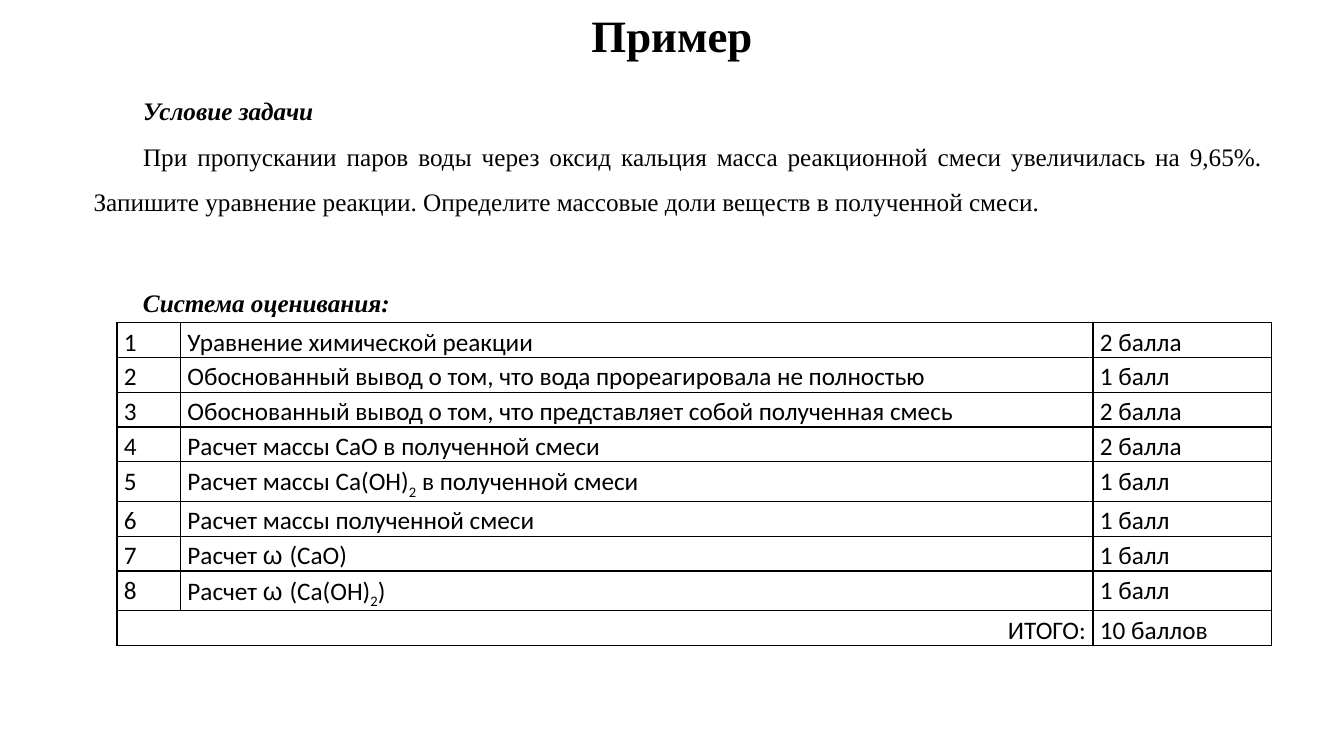
"""Build the slide with a sample chemistry task and its marking table."""
from lxml import etree
from pptx import Presentation
from pptx import util as u
from pptx.dml.color import RGBColor
from pptx.enum import text as t
from pptx.oxml import ns

BLACK = RGBColor(0, 0, 0)
WHITE = RGBColor(255, 255, 255)
SERIF, SANS, GREEK = "Times New Roman", "Calibri", "Arial"
LEFT, RIGHT = t.PP_ALIGN.LEFT, t.PP_ALIGN.RIGHT
MID, JUST = t.PP_ALIGN.CENTER, t.PP_ALIGN.JUSTIFY
SUB = ("2", {"sub": True})
OMEGA = ("ω ", {"font": GREEK})
MARKS = [
    (["Уравнение химической реакции"], "2 балла"),
    (["Обоснованный вывод о том, что вода прореагировала не полностью"], "1 балл"),
    (["Обоснованный вывод о том, что представляет собой полученная смесь"], "2 балла"),
    (["Расчет массы СаО в полученной смеси"], "2 балла"),
    (["Расчет массы Са(ОН)", SUB, " в полученной смеси"], "1 балл"),
    (["Расчет массы полученной смеси"], "1 балл"),
    (["Расчет ", OMEGA, "(СаO)"], "1 балл"),
    (["Расчет ", OMEGA, "(Са(OH)", SUB, ")"], "1 балл"),
]


def write(par, parts, font=SANS, size=18, bold=False, slant=False,
          align=LEFT, lead=1.0, indent=0):
    par.alignment, par.line_spacing = align, lead
    if indent:
        props = par._p.get_or_add_pPr()
        props.set("marL", "0")
        props.set("indent", str(u.Inches(indent)))
    for part in parts:
        words, extra = (part, {}) if isinstance(part, str) else part
        run = par.add_run()
        run.text = words
        run.font.name = extra.get("font", font)
        run.font.size = u.Pt(size)
        run.font.bold, run.font.italic = bold, slant
        run.font.color.rgb = BLACK
        if extra.get("sub"):
            run.font._element.set("baseline", "-25000")


class Page:
    """Hold the deck, the current slide and its style."""

    def __init__(self):
        self.deck = Presentation()
        self.deck.slide_width = u.Inches(13.33)
        self.deck.slide_height = u.Inches(7.5)
        self.slide = self.deck.slides.add_slide(self.deck.slide_layouts[5])
        self.slide.background.fill.solid()
        self.slide.background.fill.fore_color.rgb = WHITE

    def title(self, words, box):
        shape = self.slide.shapes.title
        shape.left, shape.top, shape.width, shape.height = map(u.Inches, box)
        frame = shape.text_frame
        frame.vertical_anchor = t.MSO_ANCHOR.MIDDLE
        write(frame.paragraphs[0], [words], font=SERIF, size=32, bold=True,
              align=MID, lead=0.9)

    def body(self, lines, box, wrap=True):
        frame = self.slide.shapes.add_textbox(*map(u.Inches, box)).text_frame
        frame.word_wrap = wrap
        frame.auto_size = t.MSO_AUTO_SIZE.SHAPE_TO_FIT_TEXT
        for i, (words, strong) in enumerate(lines):
            par = frame.add_paragraph() if i else frame.paragraphs[0]
            write(par, [words], font=SERIF, bold=strong, slant=strong,
                  align=JUST, lead=1.5, indent=0.49)

    def cell(self, cell, parts, align=LEFT):
        cell.margin_left = cell.margin_right = u.Inches(0.07)
        cell.margin_top = cell.margin_bottom = 0
        write(cell.text_frame.paragraphs[0], parts, align=align, lead=1.15)

    def frame(self, cell):
        props = cell._tc.get_or_add_tcPr()
        for side in ("a:lnL", "a:lnR", "a:lnT", "a:lnB"):
            line = etree.SubElement(props, ns.qn(side), w=str(u.Pt(1)))
            fill = etree.SubElement(line, ns.qn("a:solidFill"))
            etree.SubElement(fill, ns.qn("a:srgbClr"), val=str(BLACK))
        cell.fill.background()

    def table(self, marks, total, box, widths):
        count = len(marks) + 1
        grid = self.slide.shapes.add_table(
            count, len(widths), *map(u.Inches, box)).table
        grid.first_row = grid.horz_banding = False
        for col, width in zip(grid.columns, widths):
            col.width = u.Inches(width)
        for cell in grid.iter_cells():
            self.frame(cell)
        for i, (parts, score) in enumerate(marks):
            for j, item in enumerate(([str(i + 1)], parts, [score])):
                self.cell(grid.cell(i, j), item)
        last = count - 1
        grid.cell(last, 0).merge(grid.cell(last, 1))
        self.cell(grid.cell(last, 0), ["ИТОГО:"], align=RIGHT)
        self.cell(grid.cell(last, 2), [total])


def main():
    page = Page()
    page.body([
        ("Условие задачи", True),
        ("При пропускании паров воды через оксид кальция масса реакционной "
         "смеси увеличилась на 9,65%. Запишите уравнение реакции. Определите "
         "массовые доли веществ в полученной смеси.", False),
    ], (0.83, 0.75, 11.79, 1.41))
    page.title("Пример", (1.16, 0, 11.01, 0.75))
    page.table(MARKS, "10 баллов", (1.16, 3.2, 11.45, 2.92), (0.63, 9.05, 1.77))
    page.body([("Система оценивания:", True)], (0.83, 2.65, 3.17, 0.5), wrap=False)
    page.deck.save("out.pptx")


if __name__ == "__main__":
    main()
